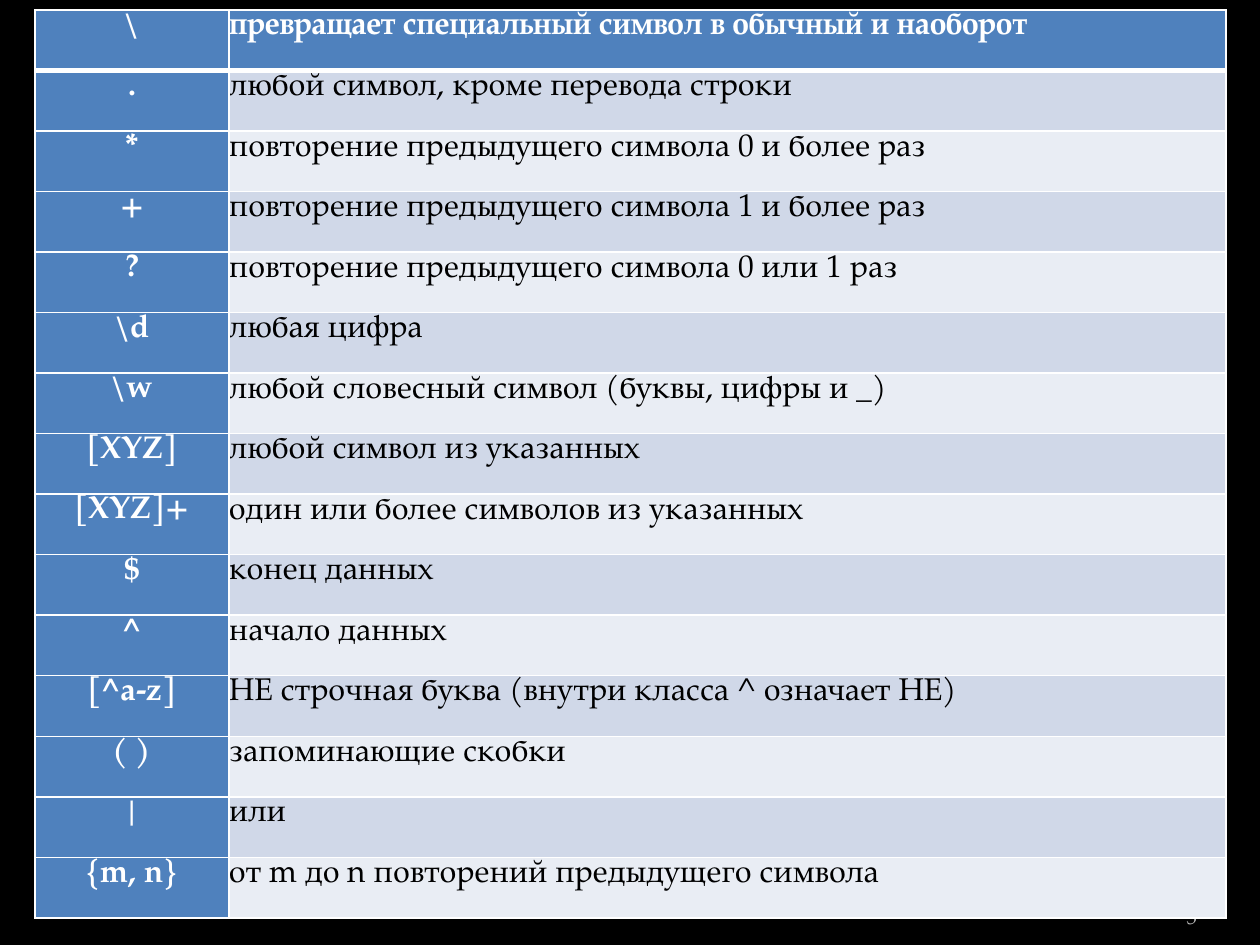
from typing import NamedTuple

from lxml import etree
from pptx import Presentation
from pptx.dml.color import RGBColor
from pptx.enum.text import MSO_ANCHOR, PP_ALIGN
from pptx.oxml.ns import qn
from pptx.util import Emu, Pt

CENTER, LEFT, RIGHT = PP_ALIGN.CENTER, PP_ALIGN.LEFT, PP_ALIGN.RIGHT
TOP, BOTTOM = MSO_ANCHOR.TOP, MSO_ANCHOR.BOTTOM

PX_PER_INCH = 126
FONT = "TeX Gyre Pagella"
BLACK = RGBColor(0x00, 0x00, 0x00)
WHITE = RGBColor(0xFF, 0xFF, 0xFF)
GREY = RGBColor(0xBD, 0xBD, 0xBD)
BLUE = RGBColor(0x4F, 0x81, 0xBD)
BANDS = (RGBColor(0xE9, 0xED, 0xF4), RGBColor(0xD0, 0xD8, 0xE8))

COLUMN_WIDTHS = (194, 997)
TABLE_LEFT, TABLE_TOP, TABLE_HEIGHT = 35, 10, 908


class Rule(NamedTuple):
    pattern: str
    meaning: str


RULES = (
    Rule("\\", "превращает специальный символ в обычный и наоборот"),
    Rule(".", "любой символ, кроме перевода строки"),
    Rule("*", "повторение предыдущего символа 0 и более раз"),
    Rule("+", "повторение предыдущего символа 1 и более раз"),
    Rule("?", "повторение предыдущего символа 0 или 1 раз"),
    Rule("\\d", "любая цифра"),
    Rule("\\w", "любой словесный символ (буквы, цифры и _)"),
    Rule("[XYZ]", "любой символ из указанных"),
    Rule("[XYZ]+", "один или более символов из указанных"),
    Rule("$", "конец данных"),
    Rule("^", "начало данных"),
    Rule("[^a-z]", "НЕ строчная буква (внутри класса ^ означает НЕ)"),
    Rule("( )", "запоминающие скобки"),
    Rule("|", "или"),
    Rule("{m, n}", "от m до n повторений предыдущего символа"),
)


def px(n: int) -> Emu:
    return Emu(round(n * 914400 / PX_PER_INCH))


def style_font(p, size: int, color: RGBColor, bold: bool = False) -> None:
    p.font.name = FONT
    p.font.size = Pt(size)
    p.font.bold = bold
    p.font.color.rgb = color


def add_borders(cell, top: int, bottom: int) -> None:
    """Draw white cell borders; top and bottom widths are in points."""
    tc_pr = cell._tc.get_or_add_tcPr()
    for side, width in (("L", 1), ("R", 1), ("T", top), ("B", bottom)):
        ln = etree.SubElement(tc_pr, qn(f"a:ln{side}"), w=str(Pt(width)))
        fill = etree.SubElement(ln, qn("a:solidFill"))
        etree.SubElement(fill, qn("a:srgbClr"), val=str(WHITE))


def fill_cell(cell, text: str, row: int, col: int) -> None:
    heading = row == 0 or col == 0
    add_borders(cell, 3 if row == 1 else 1, 3 if row == 0 else 1)
    cell.fill.solid()
    cell.fill.fore_color.rgb = BLUE if heading else BANDS[row % 2]
    cell.margin_left = cell.margin_right = 0
    cell.margin_top = cell.margin_bottom = 0
    cell.vertical_anchor = TOP
    cell.text = text
    p = cell.text_frame.paragraphs[0]
    p.alignment = CENTER if col == 0 else LEFT
    p.line_spacing = 1.07
    p.space_after = Pt(8)
    style_font(p, 18, WHITE if heading else BLACK, heading)


def add_page_number(s, number: str) -> None:
    tf = s.shapes.add_textbox(px(1092), px(885), px(105), px(50)).text_frame
    tf.word_wrap = True
    tf.vertical_anchor = BOTTOM
    tf.margin_left = tf.margin_right = 0
    p = tf.paragraphs[0]
    p.text = number
    p.alignment = RIGHT
    style_font(p, 12, GREY)


def add_rules_table(s) -> None:
    table = s.shapes.add_table(
        len(RULES), len(COLUMN_WIDTHS), px(TABLE_LEFT), px(TABLE_TOP),
        px(sum(COLUMN_WIDTHS)), px(TABLE_HEIGHT)).table
    for column, width in zip(table.columns, COLUMN_WIDTHS):
        column.width = px(width)
    for row, rule in enumerate(RULES):
        for col, text in enumerate(rule):
            fill_cell(table.cell(row, col), text, row, col)


def main() -> None:
    prs = Presentation()
    prs.slide_width, prs.slide_height = px(1260), px(945)
    s = prs.slides.add_slide(prs.slide_layouts[6])
    s.background.fill.solid()
    s.background.fill.fore_color.rgb = BLACK

    # Page number sits behind the table
    add_page_number(s, "5")
    # Regular expression reference
    add_rules_table(s)
    prs.save("out.pptx")


if __name__ == "__main__":
    main()
